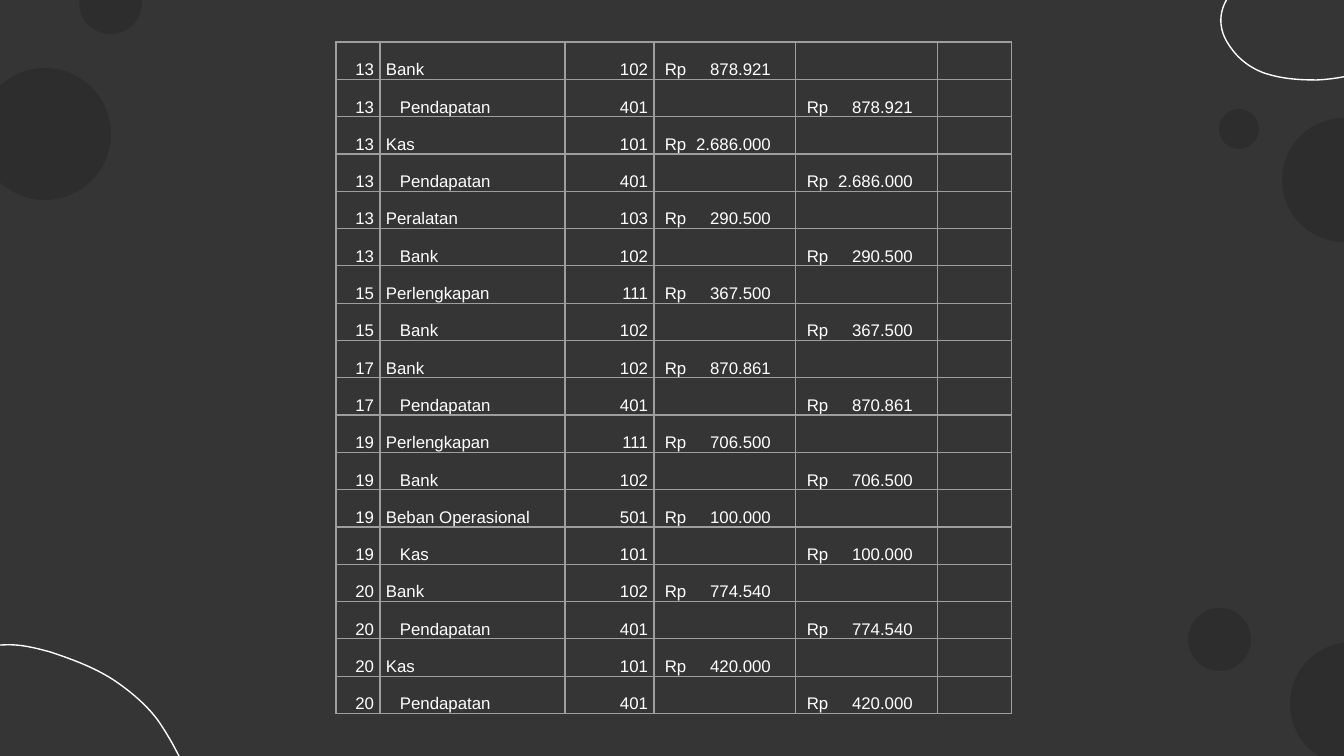
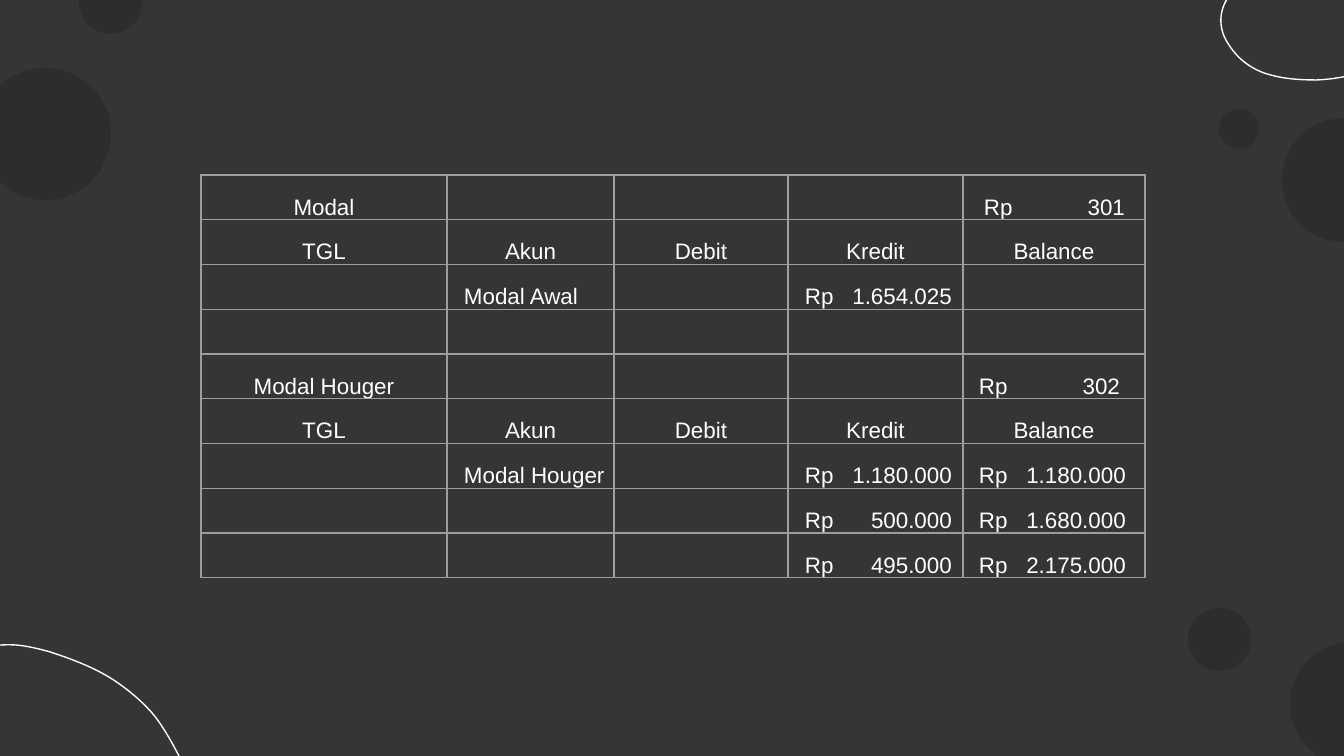
"""Build two dark slides: a journal table and a capital ledger table."""
import math
from lxml import etree
from pptx import Presentation
from pptx import util as u
from pptx.dml.color import RGBColor
from pptx.enum import shapes, text
from pptx.oxml import ns

PX = u.Inches(10) / 1344
COLORS = {"background": "353535", "circle": "2D2D2D", "text": "FFFFFF", "border": "9E9E9E"}
LEFT, CENTER, RIGHT = text.PP_ALIGN.LEFT, text.PP_ALIGN.CENTER, text.PP_ALIGN.RIGHT
PARAGRAPH_FORMAT = {"line_spacing": 1.07, "space_after": u.Pt(8)}

CIRCLES = [(1290, 642, 124), (1188, 608, 63), (1282, 118, 124),
           (1219, 109, 40), (-21, 68, 132), (79, -29, 63)]
BLOB_WIDTH, BLOB_HEIGHT = 336, 179
BLOB_PLACES = [(89, 775, 45), (1383, -33, 135)]
BLOB_START = (28, 793)
BLOB_CURVES = [
    [(5, 767), (-24, 749), (-40, 719)],
    [(-54, 698), (-50, 676), (-32, 659)],
    [(-22, 648), (-9, 645), (4, 645)],
    [(20, 644), (35, 648), (50, 652)],
    [(71, 659), (93, 667), (112, 679)],
    [(129, 690), (148, 706), (159, 722)],
    [(182, 756), (200, 797), (202, 841)],
    [(202, 859), (201, 876), (195, 894)],
    [(189, 910), (179, 922), (164, 931)],
    [(149, 940), (132, 939), (118, 929)],
    [(105, 917), (94, 903), (86, 887)],
    [(71, 860), (55, 827), (35, 801)],
    [(34, 798), (31, 796), (28, 793)],
]

ACCOUNT_CODES = {"Kas": "101", "Bank": "102", "Peralatan": "103", "Perlengkapan": "111",
                 "Pendapatan": "401", "Beban Operasional": "501"}
TRANSACTIONS = [
    ("13", "Bank", "Pendapatan", "878.921"),
    ("13", "Kas", "Pendapatan", "2.686.000"),
    ("13", "Peralatan", "Bank", "290.500"),
    ("15", "Perlengkapan", "Bank", "367.500"),
    ("17", "Bank", "Pendapatan", "870.861"),
    ("19", "Perlengkapan", "Bank", "706.500"),
    ("19", "Beban Operasional", "Kas", "100.000"),
    ("20", "Bank", "Pendapatan", "774.540"),
    ("20", "Kas", "Pendapatan", "420.000"),
]


def px(length):
    return u.Emu(round(length * PX))


def blob_point(point):
    center_x, center_y, angle = BLOB_PLACES[0]
    x, y = point[0] - center_x, point[1] - center_y
    cosine, sine = math.cos(math.radians(angle)), math.sin(math.radians(angle))
    return (px(x * cosine + y * sine + BLOB_WIDTH / 2),
            px(y * cosine - x * sine + BLOB_HEIGHT / 2))


EMPTY = ("", LEFT, 0)
journal_rows = []
for day, debit, credit, value in TRANSACTIONS:
    amount = (f"Rp\t{value}", LEFT, 5)
    for account, indent, amounts in ((debit, 0, [amount, EMPTY]), (credit, 14, [EMPTY, amount])):
        journal_rows.append([(day, RIGHT, 0), (account, LEFT, indent),
                             (ACCOUNT_CODES[account], RIGHT, 0), *amounts, EMPTY])

ledger_header = [(label, CENTER, 0) for label in ("TGL", "Akun", "Debit", "Kredit", "Balance")]
ledger_rows = [
    [("Modal", CENTER, 0), EMPTY, EMPTY, EMPTY, ("Rp\t301", LEFT, 12)],
    ledger_header,
    [EMPTY, ("Modal Awal", LEFT, 8), EMPTY, ("Rp\t1.654.025", LEFT, 8), EMPTY],
    [EMPTY] * 5,
    [("Modal Houger", CENTER, 0), EMPTY, EMPTY, EMPTY, ("Rp\t302", LEFT, 7)],
    ledger_header,
    [EMPTY, ("Modal Houger", LEFT, 8), EMPTY, ("Rp\t1.180.000", LEFT, 8), ("Rp\t1.180.000", LEFT, 7)],
    [EMPTY, EMPTY, EMPTY, ("Rp\t500.000", LEFT, 8), ("Rp\t1.680.000", LEFT, 7)],
    [EMPTY, EMPTY, EMPTY, ("Rp\t495.000", LEFT, 8), ("Rp\t2.175.000", LEFT, 7)],
]
TABLES = [
    {"rows": journal_rows, "left": 336, "top": 42, "height": 672, "size": 9, "inset": 6,
     "columns": [44, 185, 89, 142, 142, 74], "tabs": {"default": 106}},
    {"rows": ledger_rows, "left": 201, "top": 175, "height": 403, "size": 12, "inset": 9,
     "columns": [246, 167, 174, 175, 182],
     "tabs": {"default": 147, "Rp\t301": 141, "Rp\t302": 141}},
]

presentation = Presentation()
presentation.slide_width, presentation.slide_height = px(1344), px(756)
background = presentation.slide_master.background.fill
background.solid()
background.fore_color.rgb = color = RGBColor.from_string(COLORS["background"])

for layout in TABLES:
    slide = presentation.slides.add_slide(presentation.slide_layouts[6])

    for center_x, center_y, angle in BLOB_PLACES:
        builder = slide.shapes.build_freeform(*blob_point(BLOB_START), scale=1.0)
        builder.add_line_segments([blob_point(curve[-1]) for curve in BLOB_CURVES], close=True)
        shape = builder.convert_to_shape()
        outline = next(shape._element.iter(ns.qn("a:path")))
        for name, length in (("w", BLOB_WIDTH), ("h", BLOB_HEIGHT)):
            outline.set(name, str(px(length)))
        start = next(outline.iter(ns.qn("a:pt")))
        for name, value in zip("xy", blob_point(BLOB_START)):
            start.set(name, str(value))
        for line, curve in zip(outline.findall(ns.qn("a:lnTo")), BLOB_CURVES):
            bezier = etree.Element(ns.qn("a:cubicBezTo"))
            for x, y in map(blob_point, curve):
                etree.SubElement(bezier, ns.qn("a:pt"), x=str(x), y=str(y))
            outline.replace(line, bezier)
        frame = {"left": px(center_x - BLOB_WIDTH / 2), "top": px(center_y - BLOB_HEIGHT / 2),
                 "width": px(BLOB_WIDTH), "height": px(BLOB_HEIGHT), "rotation": angle}
        for name, value in frame.items():
            setattr(shape, name, value)
        shape.shadow.inherit = False
        shape.fill.background()
        shape.line.color.rgb = RGBColor.from_string(COLORS["text"])
        shape.line.width = u.Pt(0.75)

    for left, top, diameter in CIRCLES:
        shape = slide.shapes.add_shape(shapes.MSO_SHAPE.OVAL, px(left), px(top),
                                       px(diameter), px(diameter))
        shape.shadow.inherit = False
        shape.fill.solid()
        shape.fill.fore_color.rgb = RGBColor.from_string(COLORS["circle"])
        shape.line.fill.background()

    rows, columns = layout["rows"], layout["columns"]
    table = slide.shapes.add_table(len(rows), len(columns), px(layout["left"]), px(layout["top"]),
                                   px(sum(columns)), px(layout["height"])).table
    table.first_row = table.horz_banding = False
    for column, width in zip(table.columns, columns):
        column.width = px(width)
    for row, contents in zip(table.rows, rows):
        row.height = px(layout["height"] / len(rows))
        for cell, (content, alignment, indent) in zip(row.cells, contents):
            cell_format = {"margin_left": px(layout["inset"] + indent),
                           "margin_right": px(layout["inset"]), "margin_top": 0,
                           "margin_bottom": 0, "vertical_anchor": text.MSO_ANCHOR.BOTTOM}
            for name, value in cell_format.items():
                setattr(cell, name, value)
            properties = cell._tc.get_or_add_tcPr()
            for side in ("a:lnL", "a:lnR", "a:lnT", "a:lnB"):
                border = etree.SubElement(properties, ns.qn(side), w=str(u.Pt(0.75)))
                fill = etree.SubElement(border, ns.qn("a:solidFill"))
                etree.SubElement(fill, ns.qn("a:srgbClr"), val=COLORS["border"])
            cell.fill.background()

            paragraph = cell.text_frame.paragraphs[0]
            for name, value in {**PARAGRAPH_FORMAT, "alignment": alignment}.items():
                setattr(paragraph, name, value)
            if "\t" in content:
                position = layout["tabs"].get(content, layout["tabs"]["default"])
                tabs = etree.SubElement(paragraph._p.get_or_add_pPr(), ns.qn("a:tabLst"))
                etree.SubElement(tabs, ns.qn("a:tab"), pos=str(px(position)), algn="r")
            if content:
                run = paragraph.add_run()
                run.text = content
                run.font.name = "Arial"
                run.font.size = u.Pt(layout["size"])
                run.font.color.rgb = RGBColor.from_string(COLORS["text"])
            else:
                etree.SubElement(paragraph._p, ns.qn("a:endParaRPr"), sz=str(layout["size"] * 100))

presentation.save("out.pptx")
